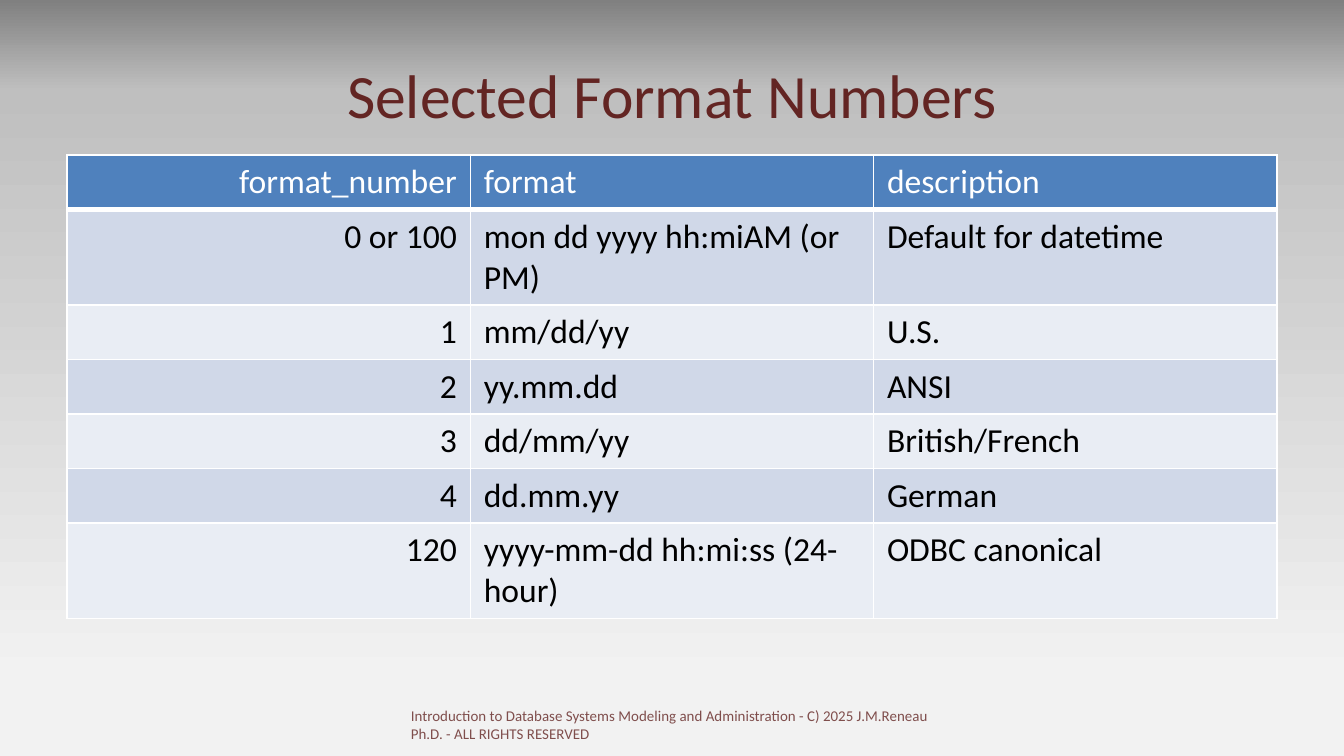
from copy import deepcopy

from lxml import etree
from pptx import Presentation
from pptx.dml import color
from pptx.enum import text
from pptx.oxml import ns
from pptx import util as u

HUES = {
    "title": "632523", "head": "4F81BD", "band": "D0D8E8", "pale": "E9EDF4",
    "white": "FFFFFF", "ink": "000000",
    "dusk": "808080", "mist": "BFBFBF", "fog": "F2F2F2",
}
ROWS = [
    ("format_number", "format", "description"),
    ("0 or 100", "mon dd yyyy hh:miAM (or PM)", "Default for datetime"),
    ("1", "mm/dd/yy", "U.S."),
    ("2", "yy.mm.dd", "ANSI"),
    ("3", "dd/mm/yy", "British/French"),
    ("4", "dd.mm.yy", "German"),
    ("120", "yyyy-mm-dd hh:mi:ss (24-hour)", "ODBC canonical"),
]
TALL = (1, 6)
LEFT, RIGHT, MID = text.PP_ALIGN.LEFT, text.PP_ALIGN.RIGHT, text.PP_ALIGN.CENTER


def rgb(hue):
    return color.RGBColor.from_string(HUES[hue])


class Deck:
    face = "Calibri"

    def __init__(self, wide, high):
        self.show = Presentation()
        self.show.slide_width, self.show.slide_height = u.Pt(wide), u.Pt(high)
        self.slide = self.show.slides.add_slide(self.show.slide_layouts[6])

    def ground(self, stops):
        fill = self.slide.background.fill
        fill.gradient()
        fill.gradient_angle = 270
        ramp = self.slide.element.xpath(".//a:gsLst")[0]
        while len(ramp) < len(stops):
            ramp.append(deepcopy(ramp[-1]))
        for stop, (place, hue) in zip(fill.gradient_stops, stops):
            stop.position = place
            stop.color.rgb = rgb(hue)

    def phrase(self, frame, words, size, hue, align=LEFT):
        para = frame.paragraphs[0]
        para.alignment = align
        run = para.add_run()
        run.text = words
        looks = {"name": self.face, "size": u.Pt(size), "bold": False}
        for key, value in looks.items():
            setattr(run.font, key, value)
        run.font.color.rgb = rgb(hue)
        return run

    def label(self, box, words, size, hue, align=LEFT, anchor=text.MSO_ANCHOR.TOP):
        frame = self.slide.shapes.add_textbox(*map(u.Pt, box)).text_frame
        looks = {"word_wrap": True, "vertical_anchor": anchor}
        for key, value in looks.items():
            setattr(frame, key, value)
        return self.phrase(frame, words, size, hue, align)

    def fade(self, run, share):
        tint = run._r.xpath(".//a:srgbClr")[0]
        etree.SubElement(tint, ns.qn("a:alpha"), val=str(share * 1000))

    def edge(self, cell, base):
        props = cell._tc.get_or_add_tcPr()
        for side, wide in (("L", 1), ("R", 1), ("T", 1), ("B", base)):
            line = etree.SubElement(props, ns.qn(f"a:ln{side}"), w=str(int(u.Pt(wide))))
            fill = etree.SubElement(line, ns.qn("a:solidFill"))
            etree.SubElement(fill, ns.qn("a:srgbClr"), val=HUES["white"])

    def table(self, box, rows, size, low, high):
        shape = self.slide.shapes.add_table(len(rows), len(rows[0]), *map(u.Pt, box))
        grid = shape.table
        grid.horz_banding = False
        for r, row in enumerate(rows):
            grid.rows[r].height = u.Pt(high if r in TALL else low)
            fill = "head" if r == 0 else "band" if r % 2 else "pale"
            for c, words in enumerate(row):
                cell = grid.cell(r, c)
                self.edge(cell, 1 if r else 3)
                cell.fill.solid()
                cell.fill.fore_color.rgb = rgb(fill)
                self.phrase(cell.text_frame, words, size, "ink" if r else "white",
                            LEFT if c else RIGHT)


def main():
    deck = Deck(720, 405)
    deck.ground([(0, "dusk"), (0.12, "mist"), (0.9, "fog")])
    deck.label((36, 16.5, 648, 67.5), "Selected Format Numbers", 33, "title",
               MID, text.MSO_ANCHOR.MIDDLE)
    deck.table((36, 83, 648, 248.4), ROWS, 18, 29.2, 51.2)
    foot = deck.label(
        (213, 375, 292.5, 21.6),
        "Introduction to Database Systems Modeling and Administration - "
        "C) 2025 J.M.Reneau Ph.D. - ALL RIGHTS RESERVED", 8, "title")
    deck.fade(foot, 80)
    deck.show.save("out.pptx")


if __name__ == "__main__":
    main()
